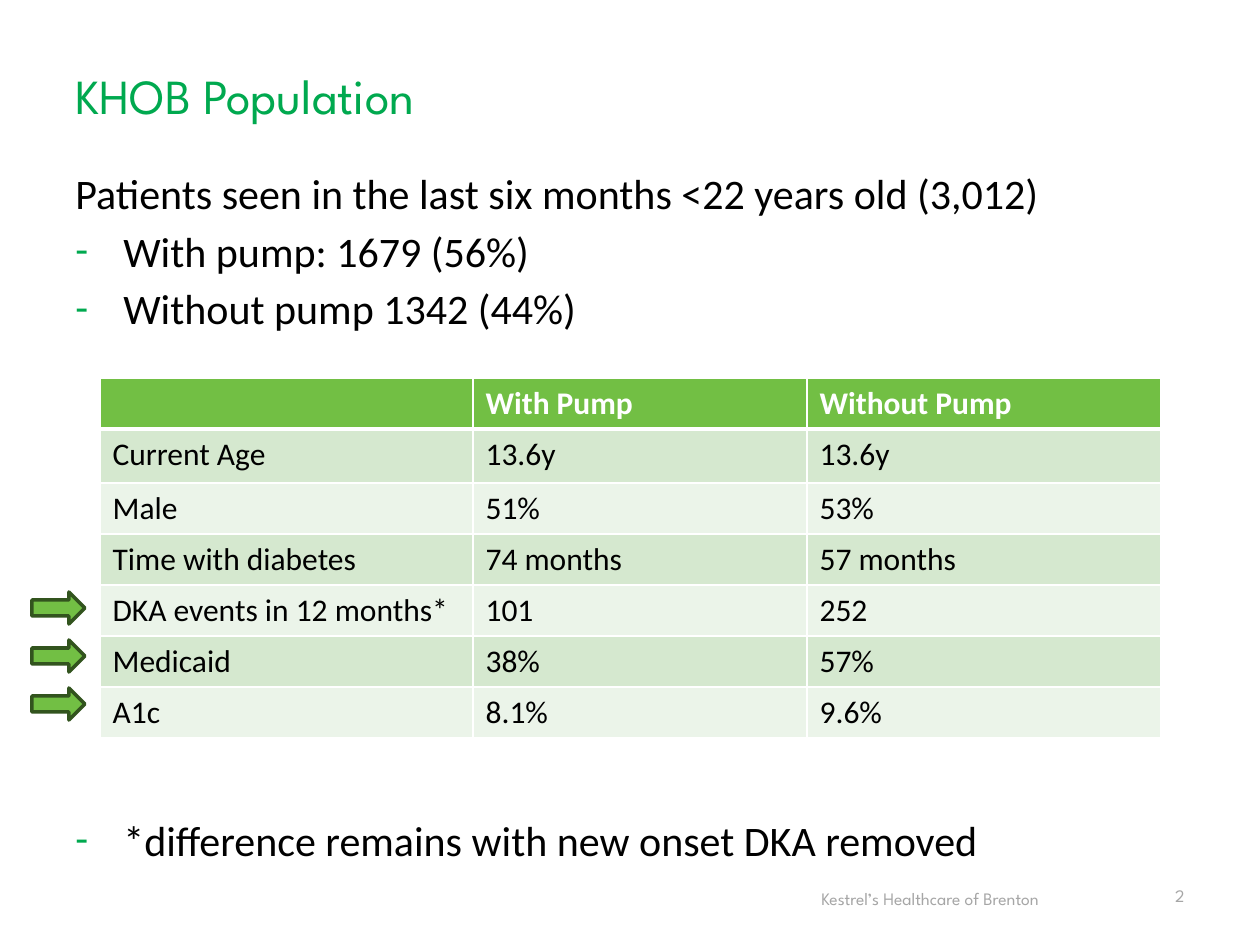
from lxml import etree
from pptx import Presentation
from pptx import util as u
from pptx.dml.color import RGBColor
from pptx.enum import shapes, text
from pptx.oxml.ns import qn

PX_PER_INCH = 126
BODY_FONT = "Calibri"
BRAND_FONT = "League Spartan"
TITLE_GREEN = "00A94F"
LEAF = "72BF44"
DARK_LEAF = "32541E"
BANDS = ("D5E8CF", "EBF4E9")
GREY = "A6A6A6"
BLACK = "000000"
WHITE = "FFFFFF"
INDENT = 48


def px(length):
    return u.Emu(round(length * u.Inches(1) / PX_PER_INCH))


def rgb(code):
    return RGBColor.from_string(code)


def write(paragraph, words, *, size, color=BLACK, font=BODY_FONT, bold=False,
          align=text.PP_ALIGN.LEFT, before=0, dash=False):
    """Fill a paragraph; dash gives it a green hanging dash."""
    if dash:
        props = paragraph._p.get_or_add_pPr()
        props.set("marL", str(px(INDENT)))
        props.set("indent", str(-px(INDENT)))
        bullet_color = etree.SubElement(props, qn("a:buClr"))
        etree.SubElement(bullet_color, qn("a:srgbClr"), val=TITLE_GREEN)
        etree.SubElement(props, qn("a:buFont"), typeface=BODY_FONT)
        etree.SubElement(props, qn("a:buChar"), char="-")
    paragraph.alignment = align
    paragraph.space_before = u.Pt(before)
    run = paragraph.add_run()
    run.text = words
    run.font.size = u.Pt(size)
    run.font.name = font
    run.font.bold = bold
    run.font.color.rgb = rgb(color)


def draw_borders(cell, widths):
    """Draw white cell edges; widths maps an edge tag to points."""
    props = cell._tc.get_or_add_tcPr()
    for tag, width in widths.items():
        edge = etree.SubElement(props, qn(f"a:{tag}"), w=str(u.Pt(width)))
        fill = etree.SubElement(edge, qn("a:solidFill"))
        etree.SubElement(fill, qn("a:srgbClr"), val=WHITE)


class Deck:
    def __init__(self, width, height):
        self.presentation = Presentation()
        self.presentation.slide_width = px(width)
        self.presentation.slide_height = px(height)
        self.slide = None

    def new_slide(self):
        blank = self.presentation.slide_layouts[6]
        self.slide = self.presentation.slides.add_slide(blank)

    def text_box(self, box, lines, anchor=text.MSO_ANCHOR.TOP, **style):
        """Add a text box; lines holds (words, dash) pairs."""
        frame = self.slide.shapes.add_textbox(*map(px, box)).text_frame
        frame.word_wrap = True
        frame.vertical_anchor = anchor
        for index, (words, dash) in enumerate(lines):
            paragraph = frame.add_paragraph() if index else frame.paragraphs[0]
            write(paragraph, words, dash=dash,
                  before=4.25 if index else 0, **style)

    def table(self, left, top, widths, heights, rows):
        table = self.slide.shapes.add_table(
            len(rows), len(widths), px(left), px(top),
            px(sum(widths)), px(sum(heights))).table
        for column, width in zip(table.columns, widths):
            column.width = px(width)
        for row, height in zip(table.rows, heights):
            row.height = px(height)
        for r, row in enumerate(rows):
            header = r == 0
            for c, words in enumerate(row):
                cell = table.cell(r, c)
                draw_borders(cell, {"lnL": 1, "lnR": 1,
                                    "lnT": 3 if r == 1 else 1,
                                    "lnB": 3 if header else 1})
                cell.fill.solid()
                cell.fill.fore_color.rgb = rgb(LEAF if header else BANDS[(r - 1) % 2])
                if words:
                    write(cell.text_frame.paragraphs[0], words, size=18,
                          bold=header, color=WHITE if header else BLACK)

    def arrow(self, left, top, width, height):
        arrow = self.slide.shapes.add_shape(
            shapes.MSO_SHAPE.RIGHT_ARROW, *map(px, (left, top, width, height)))
        arrow.shadow.inherit = False
        arrow.fill.solid()
        arrow.fill.fore_color.rgb = rgb(LEAF)
        arrow.line.color.rgb = rgb(DARK_LEAF)
        arrow.line.width = u.Pt(2)


def main():
    deck = Deck(1260, 945)
    deck.new_slide()
    footer_style = {"size": 10, "font": BRAND_FONT, "color": GREY}

    deck.text_box((809, 882, 301, 34),
                  [("Kestrel’s Healthcare of Brenton", False)], **footer_style)
    deck.text_box((63, 21, 1134, 110), [("KHOB Population", False)],
                  anchor=text.MSO_ANCHOR.BOTTOM,
                  size=28, font=BRAND_FONT, color=TITLE_GREEN)
    deck.text_box((63, 161, 1134, 205), [
        ("Patients seen in the last six months <22 years old (3,012)", False),
        ("With pump: 1679 (56%)", True),
        ("Without pump 1342 (44%)", True),
    ], size=24)
    deck.text_box((63, 808, 1134, 64),
                  [("*difference remains with new onset DKA removed", True)], size=24)
    deck.text_box((1092, 879, 105, 34), [("2", False)],
                  align=text.PP_ALIGN.RIGHT, **footer_style)

    deck.table(100, 378, (373, 334, 354), (51, 54) + (51,) * 5, [
        ("", "With Pump", "Without Pump"),
        ("Current Age", "13.6y", "13.6y"),
        ("Male", "51%", "53%"),
        ("Time with diabetes", "74 months", "57 months"),
        ("DKA events in 12 months*", "101", "252"),
        ("Medicaid", "38%", "57%"),
        ("A1c", "8.1%", "9.6%"),
    ])
    for top in range(592, 689, 48):
        deck.arrow(32, top, 53, 32)

    deck.presentation.save("out.pptx")


if __name__ == "__main__":
    main()
